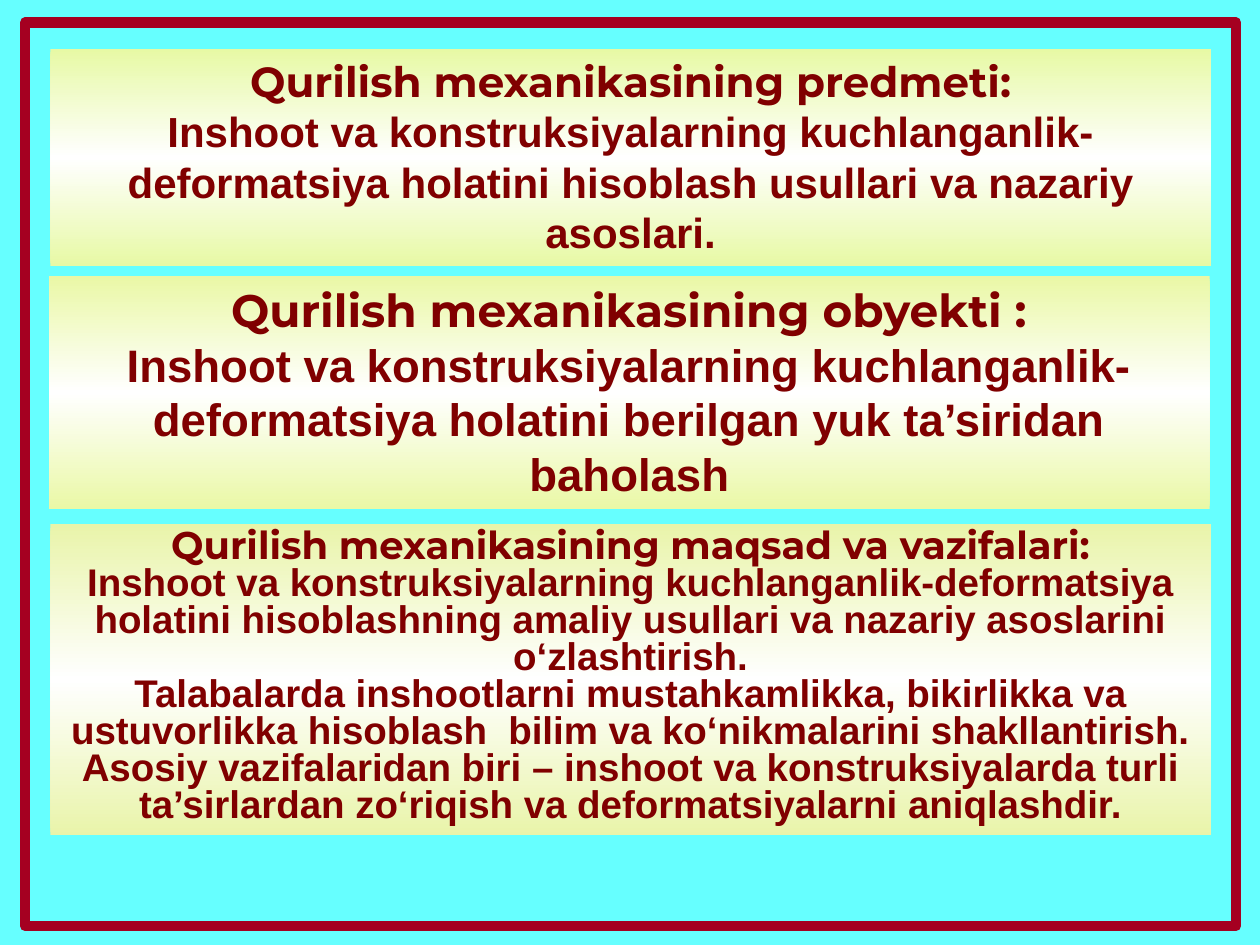
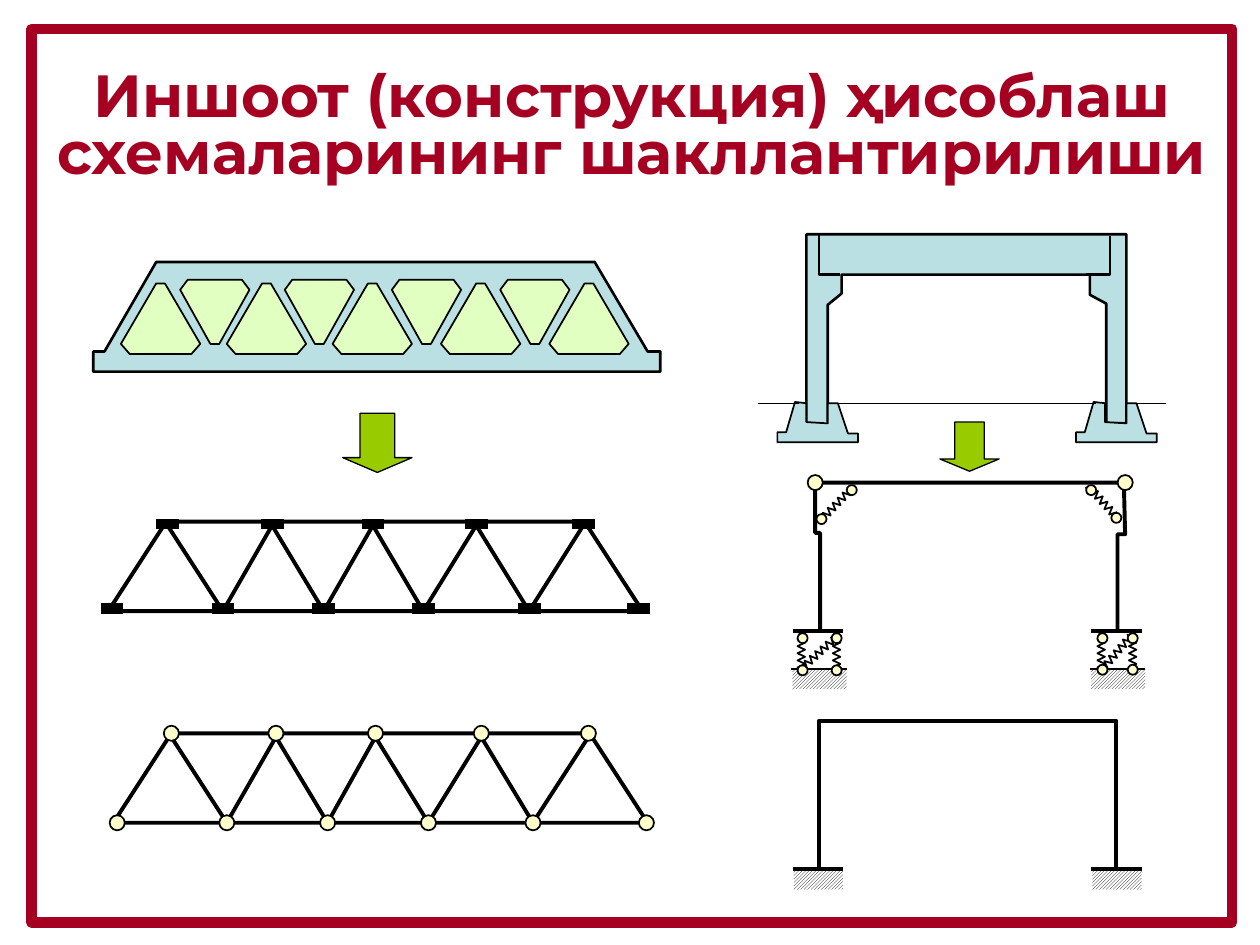
from copy import deepcopy
from dataclasses import dataclass
from itertools import chain, zip_longest

from lxml.etree import SubElement
from pptx import Presentation
from pptx.dml.color import RGBColor as Rgb
from pptx.enum.dml import MSO_PATTERN as Hatch
from pptx.enum.shapes import MSO_CONNECTOR as Link, MSO_SHAPE as Kind
from pptx.enum.text import MSO_ANCHOR as Anchor, MSO_AUTO_SIZE as Fit, PP_ALIGN as Align
from pptx.oxml.ns import qn
from pptx.util import Inches, Pt

WIDE, HIGH = Inches(10), Inches(7.5)
COLS, ROWS = 1000, 750  # fine grid that covers the slide

Spot = tuple[float, float]


@dataclass(frozen=True)
class Theme:
    aqua: str = "66FFFF"
    white: str = "FFFFFF"
    black: str = "000000"
    red: str = "A50021"
    maroon: str = "800000"
    steel: str = "BBE0E3"
    lime: str = "E0FFC1"
    cream: str = "FFFFCC"
    green: str = "99CC00"
    head: str = "Montserrat"
    body: str = "Arial"
    title: float = 34
    hair: float = 0.75
    thin: float = 1
    edge: float = 1.5
    bar: float = 2.25
    thick: float = 6


T = Theme()


@dataclass(frozen=True)
class Box:
    left: float
    top: float
    wide: float
    high: float

    def lengths(self) -> tuple[int, int, int, int]:
        return col(self.left), row(self.top), col(self.wide), row(self.high)


@dataclass(frozen=True)
class Panel:
    box: Box
    edge: str
    size: float
    lead: float
    head: str
    body: tuple[str, ...]


@dataclass(frozen=True)
class Truss:
    left: float
    top: float
    peaks: tuple[float, ...]
    feet: tuple[float, ...]


@dataclass(frozen=True)
class Spring:
    x: float
    y: float
    turn: float


PANELS = (
    Panel(Box(40, 39, 921, 172), "E7F9A5", 24, 1, "Qurilish mexanikasining predmeti:", (
        "Inshoot va konstruksiyalarning kuchlanganlik-deformatsiya holatini "
        "hisoblash usullari va nazariy asoslari.",)),
    Panel(Box(39, 219, 921, 185), "EAF8A6", 26, 1, "Qurilish mexanikasining obyekti :", (
        "Inshoot va konstruksiyalarning kuchlanganlik-deformatsiya holatini "
        "berilgan yuk ta’siridan baholash",)),
    Panel(Box(40, 416, 921, 247), "E9F4AA", 22, 0.8,
          "Qurilish mexanikasining maqsad va vazifalari:", (
              "Inshoot va konstruksiyalarning kuchlanganlik-deformatsiya holatini "
              "hisoblashning amaliy usullari va nazariy asoslarini o‘zlashtirish.",
              "Talabalarda inshootlarni mustahkamlikka, bikirlikka va ustuvorlikka "
              "hisoblash  bilim va ko‘nikmalarini shakllantirish.",
              "Asosiy vazifalaridan biri – inshoot va konstruksiyalarda turli "
              "ta’sirlardan zo‘riqish va deformatsiyalarni aniqlashdir.")),
)

GIRDER = ((74, 295), (74, 279), (83, 279), (124, 208), (472, 208),
          (514, 279), (524, 279), (524, 295))
HOLE_UP = ((7, 281), (0, 273), (28, 225), (35, 225), (63, 273), (56, 281))
HOLE_DOWN = ((6, 222), (0, 230), (24, 273), (31, 273), (55, 230), (49, 222))
PORTAL = ((640, 335), (640, 186), (894, 186), (894, 336), (878, 336), (878, 241), (865, 234),
          (865, 218), (668, 218), (668, 233), (657, 242), (657, 335))
SEATS = (((650, 185), (650, 218), (667, 218)), ((862, 218), (881, 218), (881, 187)))
FOOTING = ((23, 335), (23, 320), (14, 319), (7, 343), (0, 343), (0, 351), (64, 351),
           (64, 344), (56, 344), (48, 320), (40, 320), (40, 336))
MODEL = ((651, 501), (651, 423), (647, 423), (647, 383), (892, 383),
         (893, 424), (887, 424), (887, 501))
FRAME = ((650, 690), (650, 572), (886, 572), (886, 690))

RIGID = Truss(86, 414, (133, 216, 296, 378, 463), (89, 177, 257, 336, 420, 507))
PINNED = Truss(90, 582, (136, 219, 298, 382, 467), (93, 180, 260, 340, 423, 513))

SPRINGS = (
    Spring(664, 400, 314.3), Spring(874, 397, 47.9),
    Spring(650, 518, 317.8), Spring(887, 517, 310.4),
    *(Spring(x, 517, 270) for x in (636, 664, 874, 899)),
)
SMALL_PINS = (
    (676, 389), (652, 412), (866, 389), (886, 411),
    *((x, y) for x in (637, 664) for y in (506.5, 532)),
    *((x, y) for x in (875, 899) for y in (506.5, 531.5)),
)


def col(n: float) -> int:
    return round(WIDE * n / COLS)


def row(n: float) -> int:
    return round(HIGH * n / ROWS)


def paint(shape, fill: str | None = None, line: str | None = None, weight: float = T.thin):
    """Set plain fill and line, or none, and drop the shadow."""
    shape.shadow.inherit = False
    if fill:
        shape.fill.solid()
        shape.fill.fore_color.rgb = Rgb.from_string(fill)
    else:
        shape.fill.background()
    if line:
        shape.line.color.rgb = Rgb.from_string(line)
        shape.line.width = Pt(weight)
    else:
        shape.line.fill.background()
    return shape


def form(slide, kind: Kind, box: Box, **look):
    return paint(slide.shapes.add_shape(kind, *box.lengths()), **look)


def trace(slide, spots, closed: bool = False, shift: float = 0, **look):
    """Draw a black outline through grid spots, moved right by shift."""
    first, *rest = [(col(x + shift), row(y)) for x, y in spots]
    maker = slide.shapes.build_freeform(*first)
    maker.add_line_segments(rest, close=closed)
    return paint(maker.convert_to_shape(), line=T.black, **look)


def rule(slide, start: Spot, end: Spot, weight: float) -> None:
    line = slide.shapes.add_connector(
        Link.STRAIGHT, col(start[0]), row(start[1]), col(end[0]), row(end[1]))
    line.line.color.rgb = Rgb.from_string(T.black)
    line.line.width = Pt(weight)
    SubElement(line._element.spPr, qn("a:effectLst"))


def pin(slide, spot: Spot, size: float) -> None:
    x, y = spot
    form(slide, Kind.OVAL, Box(x - size / 2, y - size / 2, size, size),
         fill=T.cream, line=T.black)


def write(frame, text: str, *, face: str, size: float, tint: str, lead: float = 1) -> None:
    """Add one bold, centred paragraph; the empty first one is used up."""
    para = frame.paragraphs[0]
    if para.runs:
        para = frame.add_paragraph()
    para.alignment, para.line_spacing = Align.CENTER, lead
    run = para.add_run()
    run.text = text
    run.font.name, run.font.size, run.font.bold = face, Pt(size), True
    run.font.color.rgb = Rgb.from_string(tint)


def blend(shape, edge: str) -> None:
    """Fade from edge to white and back, top to bottom."""
    fill = shape.fill
    fill.gradient()
    fill.gradient_angle = 270
    stops = shape._element.spPr.find(".//" + qn("a:gsLst"))
    stops.append(deepcopy(stops[0]))
    for stop, place, tint in zip(fill.gradient_stops, (0, 0.5, 1), (edge, T.white, edge)):
        stop.position = place
        stop.color.rgb = Rgb.from_string(tint)


def start(deck, ground: str, border: Box):
    slide = deck.slides.add_slide(deck.slide_layouts[6])
    fill = slide.background.fill
    fill.solid()
    fill.fore_color.rgb = Rgb.from_string(ground)
    form(slide, Kind.RECTANGLE, border, line=T.red, weight=T.thick)
    return slide


def draw_panel(slide, panel: Panel) -> None:
    shape = form(slide, Kind.RECTANGLE, panel.box)
    blend(shape, panel.edge)
    frame = shape.text_frame
    frame.word_wrap, frame.auto_size = True, Fit.SHAPE_TO_FIT_TEXT
    frame.vertical_anchor = Anchor.TOP
    for n, text in enumerate((panel.head, *panel.body)):
        write(frame, text, face=T.body if n else T.head, size=panel.size,
              tint=T.maroon, lead=panel.lead)


def draw_truss(slide, truss: Truss) -> None:
    left, top, base = truss.left, truss.top, truss.top + 71
    trace(slide, ((left, base), (left + 46, top), (left + 378, top), (left + 424, base)),
          closed=True, weight=T.bar)
    highs = [(x, top + 3) for x in truss.peaks]
    lows = [(x, base) for x in truss.feet[1:-1]]
    web = [spot for spot in chain(*zip_longest(highs, lows)) if spot]
    trace(slide, web, weight=T.bar)


def joints(truss: Truss, inset: float = 0) -> list[Spot]:
    return ([(x, truss.top + inset) for x in truss.peaks]
            + [(x, truss.top + 71 - inset) for x in truss.feet])


def draw_spring(slide, spring: Spring) -> None:
    half, rise, last = 15.5, 3, 11
    spots = [(spring.x - half + 2 * half * n / last, spring.y + rise * (-1) ** n)
             for n in range(last + 1)]
    trace(slide, spots).rotation = spring.turn


def hatch(slide, box: Box) -> None:
    fill = form(slide, Kind.RECTANGLE, box).fill
    fill.patterned()
    fill.pattern = Hatch.LIGHT_UPWARD_DIAGONAL
    fill.fore_color.rgb = Rgb.from_string(T.black)
    fill.back_color.rgb = Rgb.from_string(T.white)


def draw_girders(slide) -> None:
    trace(slide, GIRDER, closed=True, fill=T.steel, weight=T.edge)
    for hole, lefts in ((HOLE_UP, (96, 180, 264, 350, 436)), (HOLE_DOWN, (143, 226, 311, 397))):
        for left in lefts:
            trace(slide, hole, closed=True, shift=left, fill=T.lime)
    draw_truss(slide, RIGID)
    for x, y in joints(RIGID, 2):
        rule(slide, (x - 9, y), (x + 9, y), T.thick)
    draw_truss(slide, PINNED)
    for spot in joints(PINNED):
        pin(slide, spot, 12)


def draw_portals(slide) -> None:
    trace(slide, PORTAL, fill=T.steel, weight=T.edge)
    for seat in SEATS:
        trace(slide, seat, weight=T.edge)
    for left in (617, 854):
        trace(slide, FOOTING, closed=True, shift=left, fill=T.steel)
    for left, right in ((602, 634), (665, 870), (902, 925)):
        rule(slide, (left, 320), (right, 320), T.hair)
    trace(slide, MODEL, weight=T.bar)
    for x in (647, 893):
        pin(slide, (x, 383), 12)
    trace(slide, FRAME, weight=T.bar)
    for left in (629, 866):
        hatch(slide, Box(left, 531, 43, 16))
        hatch(slide, Box(left + 1, 690, 39, 16))
        rule(slide, (left - 1, 531), (left + 43, 531), T.edge)
        for y in (501, 690):
            rule(slide, (left, y), (left + 40, y), T.bar)
    for spring in SPRINGS:
        draw_spring(slide, spring)
    for spot in SMALL_PINS:
        pin(slide, spot, 8)


def main() -> None:
    deck = Presentation()
    deck.slide_width, deck.slide_height = WIDE, HIGH

    aims = start(deck, T.aqua, Box(20, 18, 961, 717))
    for panel in PANELS:
        draw_panel(aims, panel)

    schemes = start(deck, T.white, Box(25, 23, 953, 709))
    frame = schemes.shapes.add_textbox(*Box(21, 40, 961, 125).lengths()).text_frame
    frame.word_wrap, frame.vertical_anchor = True, Anchor.MIDDLE
    write(frame, "Иншоот (конструкция) ҳисоблаш схемаларининг шакллантирилиши",
          face=T.head, size=T.title, tint=T.red, lead=0.8)
    draw_girders(schemes)
    draw_portals(schemes)
    for box in (Box(272, 328, 55, 47), Box(746, 335, 47, 39)):
        arrow = form(schemes, Kind.DOWN_ARROW, box, fill=T.green, line=T.black, weight=T.hair)
        arrow.adjustments[0], arrow.adjustments[1] = 0.5, 0.25

    deck.save("out.pptx")


if __name__ == "__main__":
    main()
